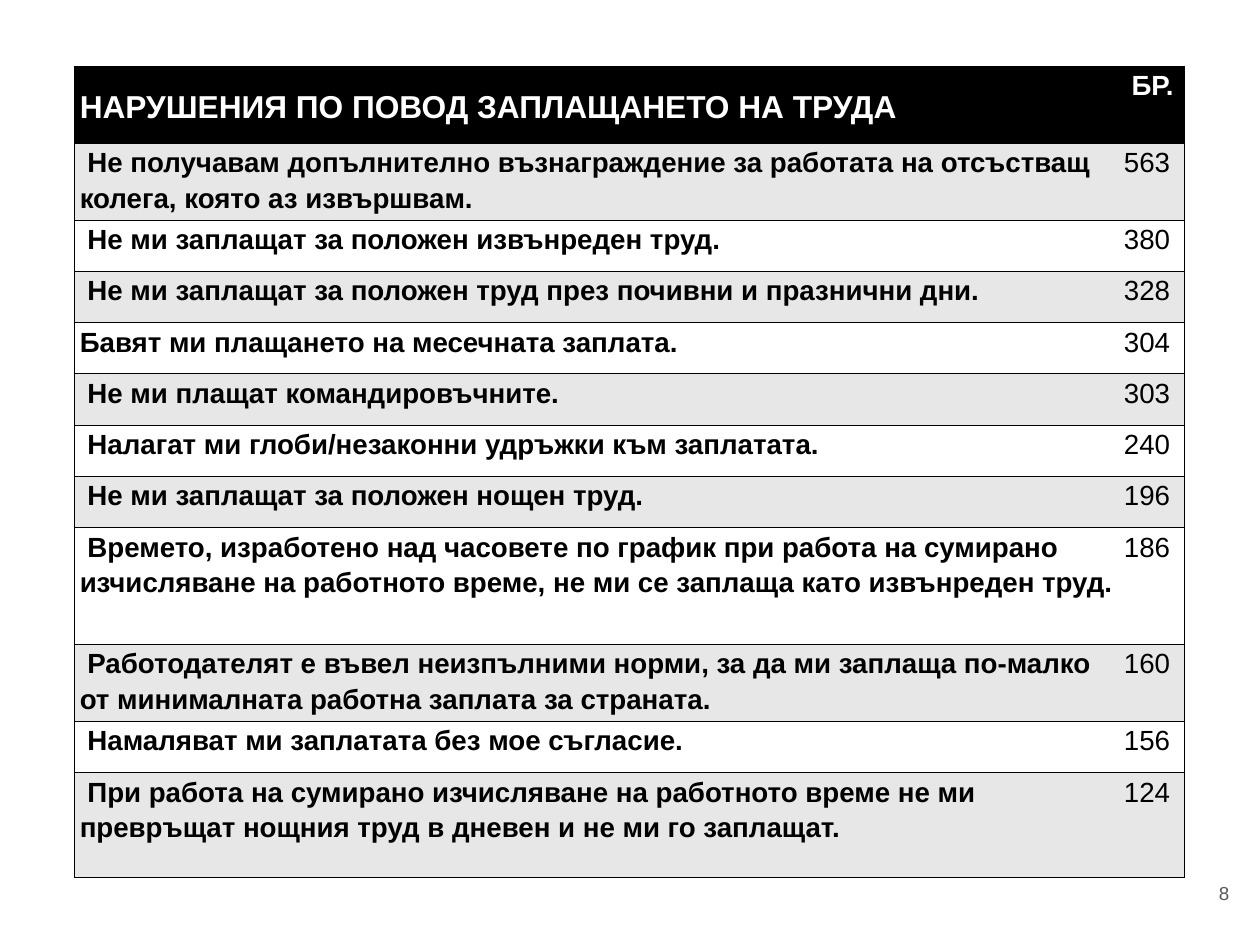
"""Build a slide with a table of pay violations and their counts."""
from lxml import etree
from pptx import Presentation
from pptx.dml.color import RGBColor
from pptx.enum.text import MSO_ANCHOR, PP_ALIGN
from pptx.oxml.ns import qn
from pptx.util import Inches, Pt

MIDDLE, TOP = MSO_ANCHOR.MIDDLE, MSO_ANCHOR.TOP
RIGHT = PP_ALIGN.RIGHT
BLACK = RGBColor(0x00, 0x00, 0x00)
WHITE = RGBColor(0xFF, 0xFF, 0xFF)
BAND = RGBColor(0xE7, 0xE7, 0xE7)
GREY = RGBColor(0x59, 0x59, 0x59)
FONT = "Arial"
WIDE, HIGH = Inches(17.69), Inches(13.27)
COLS = (14.66, 0.92)
ONE, TWO = 0.72, 1.08
HEAD = ("НАРУШЕНИЯ ПО ПОВОД ЗАПЛАЩАНЕТО НА ТРУДА", "\u00a0БР.".replace("\u00a0", " "))
ROWS = (
    (" Не получавам допълнително възнаграждение за работата на отсъстващ "
     "колега, която аз извършвам.", 563, TWO),
    (" Не ми заплащат за положен извънреден труд.", 380, ONE),
    (" Не ми заплащат за положен труд през почивни и празнични дни.", 328, ONE),
    ("Бавят ми плащането на месечната заплата.", 304, ONE),
    (" Не ми плащат командировъчните.", 303, ONE),
    (" Налагат ми глоби/незаконни удръжки към заплатата.", 240, ONE),
    (" Не ми заплащат за положен нощен труд.", 196, ONE),
    (" Времето, изработено над часовете по график при работа на сумирано "
     "изчисляване на работното време, не ми се заплаща като извънреден труд.", 186, 1.64),
    (" Работодателят е въвел неизпълними норми, за да ми заплаща по-малко "
     "от минималната работна заплата за страната.", 160, TWO),
    (" Намаляват ми заплатата без мое съгласие.", 156, ONE),
    (" При работа на сумирано изчисляване на работното време не ми "
     "превръщат нощния труд в дневен и не ми го заплащат.", 124, 1.48),
)


def add_run(para, text, size, color, bold=False):
    """Add one styled run to a paragraph."""
    run = para.add_run()
    run.text = text
    font = run.font
    font.name, font.size, font.bold = FONT, Pt(size), bold
    font.color.rgb = color


def set_edges(cell, drawn):
    """Draw the named cell edges in black and clear the others."""
    props = cell._tc.get_or_add_tcPr()
    for side in "LRTB":
        line = etree.SubElement(props, qn(f"a:ln{side}"), w=str(Pt(1)))
        if side in drawn:
            fill = etree.SubElement(line, qn("a:solidFill"))
            etree.SubElement(fill, qn("a:srgbClr"), val=str(BLACK))
        else:
            etree.SubElement(line, qn("a:noFill"))


def fill_cell(cell, text, size, color, bold, back, edges, anchor=TOP):
    """Set the text, edges and fill of one cell."""
    set_edges(cell, edges)
    cell.fill.solid()
    cell.fill.fore_color.rgb = back
    cell.margin_left = cell.margin_right = Inches(0.07)
    cell.margin_top = cell.margin_bottom = 0
    cell.vertical_anchor = anchor
    para = cell.text_frame.paragraphs[0]
    para.line_spacing = 1.15
    add_run(para, text, size, color, bold)


def add_grid(slide):
    """Add the table with its header and banded rows."""
    highs = [TWO] + [high for _, _, high in ROWS]
    frame = slide.shapes.add_table(
        len(highs), len(COLS), Inches(1.05), Inches(0.93),
        Inches(sum(COLS)), Inches(sum(highs)))
    table = frame.table
    table.first_row = table.horz_banding = False
    for col, wide in zip(table.columns, COLS):
        col.width = Inches(wide)
    for row, high in zip(table.rows, highs):
        row.height = Inches(high)
    fill_cell(table.cell(0, 0), HEAD[0], 32, WHITE, True, BLACK, "LTB", MIDDLE)
    fill_cell(table.cell(0, 1), HEAD[1], 28, WHITE, True, BLACK, "RTB")
    for num, (text, count, _) in enumerate(ROWS, 1):
        back = BAND if num % 2 else WHITE
        fill_cell(table.cell(num, 0), text, 28, BLACK, True, back, "LTB")
        fill_cell(table.cell(num, 1), str(count), 28, BLACK, False, back, "RTB")


def add_page(slide, text):
    """Add the page number in the lower right corner."""
    box = slide.shapes.add_textbox(
        Inches(16.39), Inches(12.03), Inches(1.06), Inches(1.02))
    frame = box.text_frame
    frame.word_wrap = True
    frame.vertical_anchor = MIDDLE
    frame.margin_left = frame.margin_right = Inches(0.19)
    frame.margin_top = frame.margin_bottom = Inches(0.19)
    para = frame.paragraphs[0]
    para.alignment = RIGHT
    add_run(para, text, 19, GREY)


def main():
    """Build and save the slide."""
    deck = Presentation()
    deck.slide_width, deck.slide_height = WIDE, HIGH
    slide = deck.slides.add_slide(deck.slide_layouts[6])
    add_page(slide, "8")
    add_grid(slide)
    deck.save("out.pptx")


if __name__ == "__main__":
    main()
